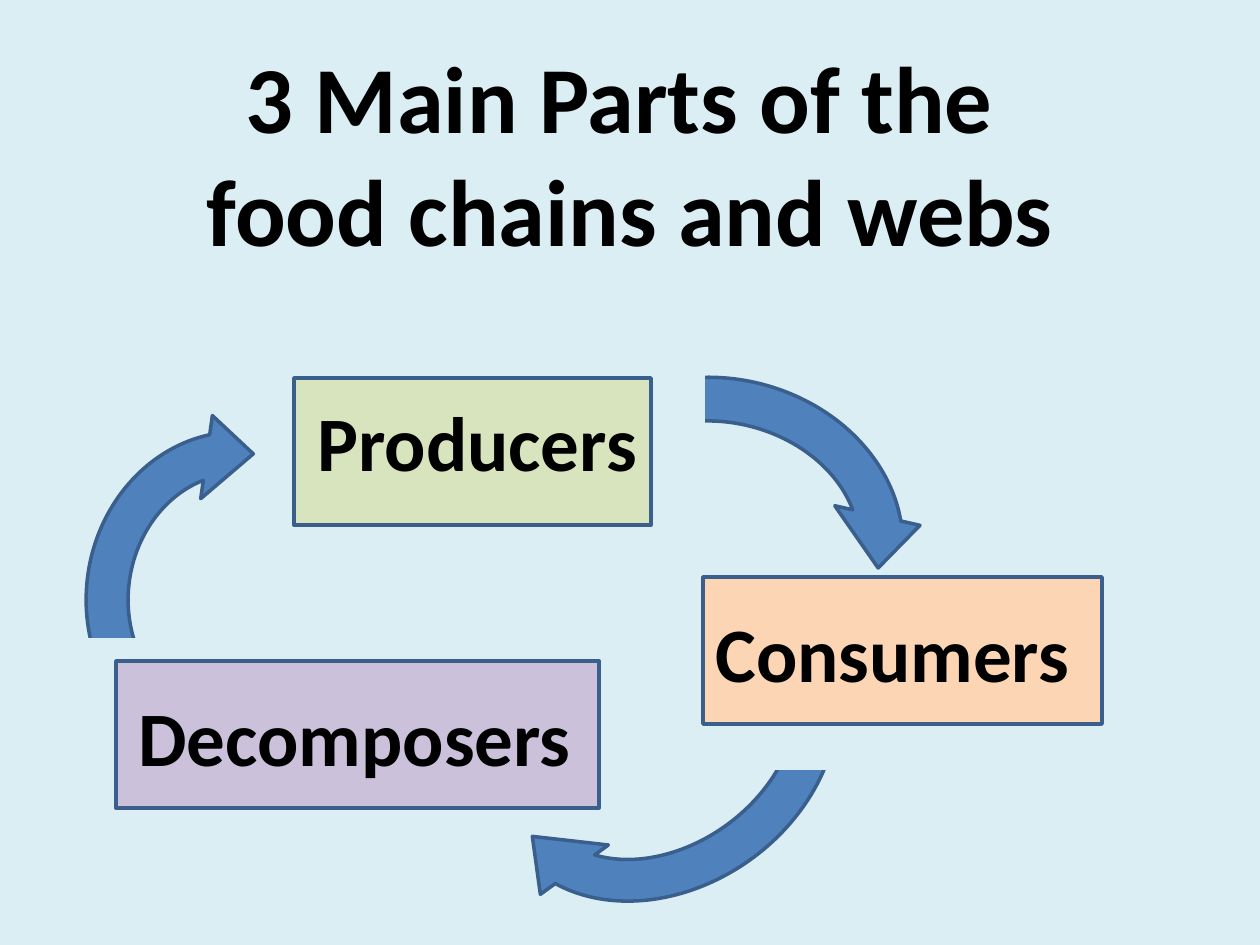
from dataclasses import dataclass
from typing import NamedTuple

from pptx import Presentation
from pptx.dml.color import RGBColor
from pptx.enum.shapes import MSO_SHAPE as Preset
from pptx.enum.text import MSO_ANCHOR as Anchor, MSO_AUTO_SIZE as AutoSize, PP_ALIGN as Align
from pptx.shapes.group import GroupShape
from pptx.util import Emu, Pt

PX_PER_INCH = 126


def px(length: int) -> Emu:
    return Emu(round(length * 914400 / PX_PER_INCH))


@dataclass(frozen=True)
class Theme:
    font: str = "Calibri"
    background: str = "DBEEF4"
    ink: str = "000000"
    arrow: str = "4F81BD"
    outline: str = "3A5F8C"
    producers: str = "D7E4BD"
    consumers: str = "FCD5B5"
    decomposers: str = "CCC1DA"
    title_size: int = 54
    label_size: int = 44
    line_width: int = 2


THEME = Theme()


class Box(NamedTuple):
    left: int
    top: int
    width: int
    height: int

    def emu(self) -> list[Emu]:
        return [px(length) for length in self]


@dataclass(frozen=True)
class Arrow:
    box: Box
    rotation: int


@dataclass(frozen=True)
class Role:
    name: str
    color: str
    card: Box
    label: Box


TITLE_BOX = Box(63, 73, 1134, 158)
TITLE_LINES = ("3 Main Parts of the ", "food chains and webs")

TO_DECOMPOSERS = Arrow(Box(459, 572, 412, 336), 144)
TO_CONSUMERS = Arrow(Box(518, 357, 408, 350), 13)
TO_PRODUCERS = Arrow(Box(49, 427, 369, 336), 278)

CONSUMERS_TAIL = Box(714, 630, 189, 138)
PRODUCERS_TAIL = Box(514, 357, 189, 179)
DECOMPOSERS_TAIL = Box(63, 640, 168, 147)

ROLES = (
    Role("Producers", THEME.producers, Box(294, 378, 357, 147), Box(305, 388, 348, 106)),
    Role("Decomposers", THEME.decomposers, Box(116, 661, 483, 147), Box(126, 683, 461, 106)),
    Role("Consumers", THEME.consumers, Box(703, 577, 399, 147), Box(703, 599, 383, 106)),
)


def add_bold_run(paragraph, text: str, size: int) -> None:
    run = paragraph.add_run()
    run.text = text
    run.font.name = THEME.font
    run.font.size = Pt(size)
    run.font.bold = True
    run.font.color.rgb = RGBColor.from_string(THEME.ink)


def draw_preset(cycle: GroupShape, preset: Preset, box: Box, fill: str, line: str,
                rotation: int = 0) -> None:
    piece = cycle.shapes.add_shape(preset, *box.emu())
    piece.rotation = rotation
    piece.shadow.inherit = False
    piece.fill.solid()
    piece.fill.fore_color.rgb = RGBColor.from_string(fill)
    piece.line.color.rgb = RGBColor.from_string(line)
    piece.line.width = Pt(THEME.line_width)


def draw_arrow(cycle: GroupShape, arrow: Arrow) -> None:
    draw_preset(cycle, Preset.CIRCULAR_ARROW, arrow.box, THEME.arrow, THEME.outline, arrow.rotation)


def trim_tail(cycle: GroupShape, box: Box) -> None:
    draw_preset(cycle, Preset.RECTANGLE, box, THEME.background, THEME.background)


def draw_role(cycle: GroupShape, role: Role) -> None:
    draw_preset(cycle, Preset.RECTANGLE, role.card, role.color, THEME.outline)
    label = cycle.shapes.add_textbox(*role.label.emu()).text_frame
    label.word_wrap = False
    label.auto_size = AutoSize.SHAPE_TO_FIT_TEXT
    add_bold_run(label.paragraphs[0], role.name, THEME.label_size)


def draw_title(title) -> None:
    title.left, title.top, title.width, title.height = TITLE_BOX.emu()
    frame = title.text_frame
    frame.auto_size = AutoSize.NONE
    frame.vertical_anchor = Anchor.MIDDLE
    heading = frame.paragraphs[0]
    heading.alignment = Align.CENTER
    first, second = TITLE_LINES
    add_bold_run(heading, first, THEME.title_size)
    heading.add_line_break()
    add_bold_run(heading, second, THEME.title_size)


def main() -> None:
    deck = Presentation()
    deck.slide_width, deck.slide_height = px(1260), px(945)
    slide = deck.slides.add_slide(deck.slide_layouts.get_by_name("Title Only"))
    slide.background.fill.solid()
    slide.background.fill.fore_color.rgb = RGBColor.from_string(THEME.background)
    draw_title(slide.shapes.title)

    cycle = slide.shapes.add_group_shape()
    draw_arrow(cycle, TO_DECOMPOSERS)
    draw_arrow(cycle, TO_CONSUMERS)
    trim_tail(cycle, CONSUMERS_TAIL)
    draw_arrow(cycle, TO_PRODUCERS)
    trim_tail(cycle, PRODUCERS_TAIL)
    trim_tail(cycle, DECOMPOSERS_TAIL)
    for role in ROLES:
        draw_role(cycle, role)

    deck.save("out.pptx")


if __name__ == "__main__":
    main()
